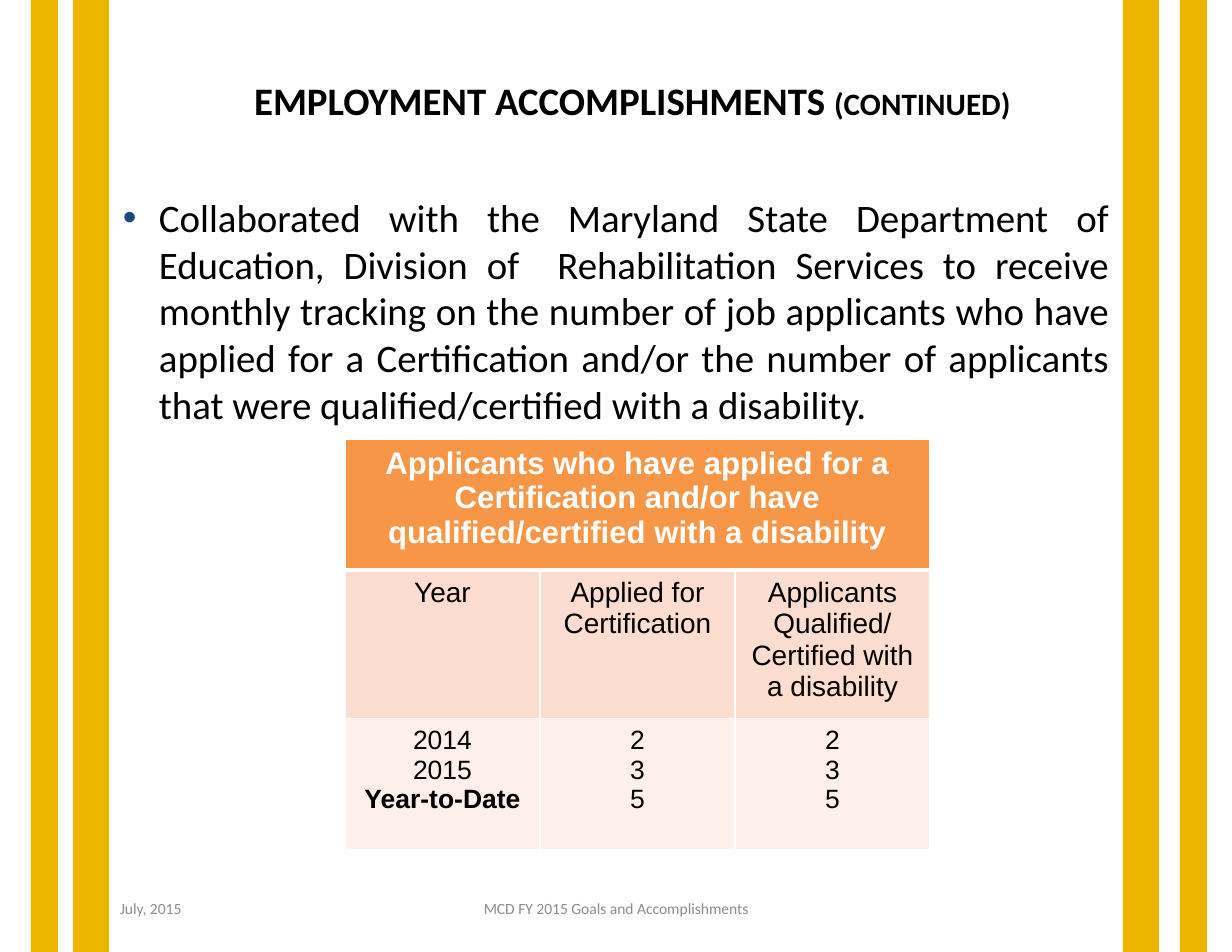
from lxml import etree
from pptx import Presentation
from pptx.dml.color import RGBColor
from pptx.enum.shapes import MSO_SHAPE
from pptx.enum.text import MSO_ANCHOR, PP_ALIGN
from pptx.oxml.ns import qn
from pptx.util import Pt

PX = 914400 / 112
RECT = MSO_SHAPE.RECTANGLE
TOP, MIDDLE = MSO_ANCHOR.TOP, MSO_ANCHOR.MIDDLE
LEFT, CENTER, JUSTIFY = PP_ALIGN.LEFT, PP_ALIGN.CENTER, PP_ALIGN.JUSTIFY

GOLD = RGBColor(0xEE, 0xB5, 0x00)
BLACK = RGBColor(0x00, 0x00, 0x00)
WHITE = RGBColor(0xFF, 0xFF, 0xFF)
GRAY = RGBColor(0x8C, 0x8C, 0x8C)
NAVY = RGBColor(0x1F, 0x49, 0x7D)
ORANGE = RGBColor(0xF7, 0x96, 0x46)
PEACH = RGBColor(0xFC, 0xDD, 0xCF)
PALE = RGBColor(0xFD, 0xEF, 0xE9)

W, H = 1232, 952
BODY = (
    "Collaborated with the Maryland State Department of Education, Division of  "
    "Rehabilitation Services to receive monthly tracking on the number of job "
    "applicants who have applied for a Certification and/or the number of applicants "
    "that were qualified/certified with a disability."
)
TABLE_TITLE = (
    "Applicants who have applied for a Certification and/or have "
    "qualified/certified with a disability"
)
HEADINGS = [
    ["Year"],
    ["Applied for Certification"],
    ["Applicants Qualified/", "Certified with a disability"],
]
TOTAL = "Year-to-Date"
FIGURES = [["2014", "2015", TOTAL], ["2", "3", "5"], ["2", "3", "5"]]


def emu(px):
    """Turn pixels into EMU."""
    return round(px * PX)


def add_run(p, text, size, color, font="Calibri", bold=False):
    """Add one styled run to a paragraph."""
    r = p.add_run()
    r.text = text
    r.font.size = Pt(size)
    r.font.name = font
    r.font.bold = bold
    r.font.color.rgb = color


def add_text(s, box, runs, align, anchor=MIDDLE):
    """Add a one-paragraph text box and return its paragraph."""
    tf = s.shapes.add_textbox(*map(emu, box)).text_frame
    tf.word_wrap = True
    tf.vertical_anchor = anchor
    p = tf.paragraphs[0]
    p.alignment = align
    for run in runs:
        add_run(p, *run)
    return p


def add_bars(s, box):
    """Draw the gold bars along both sides of the box."""
    x, y, w, h = box
    for left, width in ((73, 36), (w - 109, 36), (31, 27), (w - 52, 27)):
        sp = s.shapes.add_shape(RECT, emu(x + left), emu(y), emu(width), emu(h))
        sp.shadow.inherit = False
        sp.fill.solid()
        sp.fill.fore_color.rgb = GOLD
        sp.line.fill.background()


def add_title(s, box):
    """Write the two-size heading."""
    runs = [
        ("EMPLOYMENT ACCOMPLISHMENTS ", 25, BLACK, "Calibri", True),
        ("(CONTINUED)", 20, BLACK, "Calibri", True),
    ]
    add_text(s, box, runs, CENTER)


def add_body(s, box):
    """Write the justified bullet paragraph."""
    p = add_text(s, box, [(BODY, 25, BLACK)], JUSTIFY, TOP)
    p.space_before = Pt(5)
    pPr = p._p.get_or_add_pPr()
    pPr.set("marL", str(emu(36)))
    pPr.set("indent", str(-emu(36)))
    color = etree.SubElement(pPr, qn("a:buClr"))
    etree.SubElement(color, qn("a:srgbClr"), val=str(NAVY))
    etree.SubElement(pPr, qn("a:buFont"), typeface="Arial")
    etree.SubElement(pPr, qn("a:buChar"), char="•")


def style_cell(cell, fill, top=1, bottom=1):
    """Set the white borders, fill and margins of a cell."""
    tcPr = cell._tc.get_or_add_tcPr()
    for side, width in (("L", 1), ("R", 1), ("T", top), ("B", bottom)):
        ln = etree.SubElement(tcPr, qn("a:ln" + side), w=str(Pt(width)))
        solid = etree.SubElement(ln, qn("a:solidFill"))
        etree.SubElement(solid, qn("a:srgbClr"), val=str(WHITE))
    cell.fill.solid()
    cell.fill.fore_color.rgb = fill
    cell.margin_left = cell.margin_right = emu(12)
    cell.margin_top = cell.margin_bottom = emu(7)


def fill_cell(cell, lines, size, color, bold_lines):
    """Write centred lines into a cell, one paragraph each."""
    tf = cell.text_frame
    for i, line in enumerate(lines):
        p = tf.add_paragraph() if i else tf.paragraphs[0]
        p.alignment = CENTER
        add_run(p, line, size, color, "Arial", line in bold_lines)


def add_applicants_table(s, box):
    """Build the applicants table with its merged heading."""
    table = s.shapes.add_table(3, 3, *map(emu, box)).table
    for column in table.columns:
        column.width = emu(box[2] // 3)
    for row, height in zip(table.rows, (131, 148, 131)):
        row.height = emu(height)
    for c in range(3):
        style_cell(table.cell(0, c), ORANGE, bottom=3)
        style_cell(table.cell(1, c), PEACH, top=3)
        style_cell(table.cell(2, c), PALE)
        fill_cell(table.cell(1, c), HEADINGS[c], 18, BLACK, [])
        fill_cell(table.cell(2, c), FIGURES[c], 17, BLACK, [TOTAL])
    table.cell(0, 0).merge(table.cell(0, 2))
    fill_cell(table.cell(0, 0), [TABLE_TITLE], 20, WHITE, [TABLE_TITLE])


def add_footer(s, box):
    """Write the date and the centred footer text."""
    x, y, w, h = box
    add_text(s, (x, y, 288, h), [("July, 2015", 10, GRAY)], LEFT)
    footer = "MCD FY 2015 Goals and Accomplishments"
    add_text(s, (x + 312, y, 390, h), [(footer, 10, GRAY)], CENTER)


def main():
    """Build and save the slide."""
    prs = Presentation()
    prs.slide_width, prs.slide_height = emu(W), emu(H)
    s = prs.slides.add_slide(prs.slide_layouts[6])
    add_bars(s, (0, 0, W, H))
    add_body(s, (112, 188, 1008, 679))
    add_title(s, (83, 31, 1099, 138))
    add_applicants_table(s, (345, 439, 585, 410))
    add_footer(s, (109, 883, 1014, 50))
    prs.save("out.pptx")


if __name__ == "__main__":
    main()
